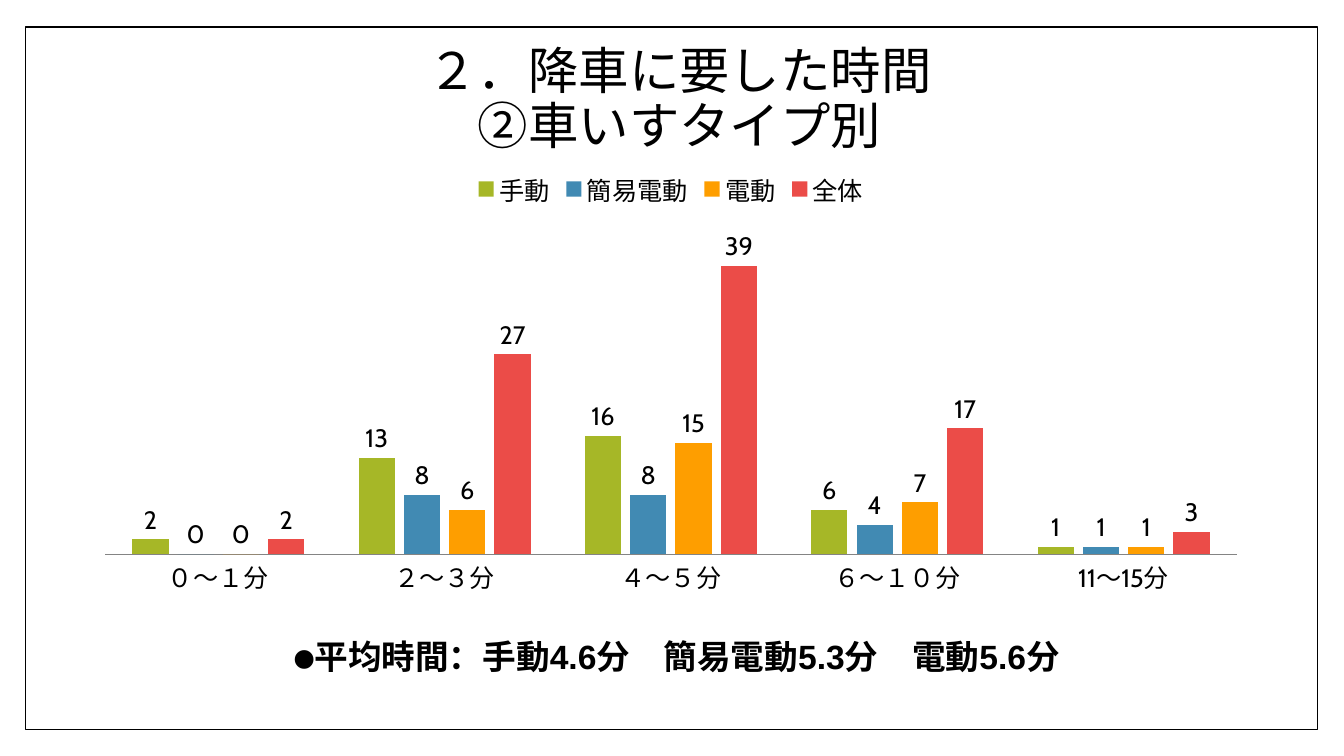
from pptx import Presentation
from pptx.chart.data import CategoryChartData as Data
from pptx.dml.color import RGBColor as Color
from pptx.enum.chart import XL_CHART_TYPE as Kind, XL_LABEL_POSITION as Spot
from pptx.enum.chart import XL_LEGEND_POSITION as Side, XL_TICK_MARK as Tick
from pptx.enum.chart import XL_TICK_LABEL_POSITION as Place
from pptx.enum.shapes import MSO_SHAPE as Shape
from pptx.enum.text import MSO_ANCHOR as Anchor, PP_ALIGN as Align
from pptx.util import Inches, Pt

HUES = {
    "black": "000000", "white": "FFFFFF", "axis": "848484",
    "green": "A6B727", "blue": "418AB3", "gold": "FE9E00", "red": "EB4C48",
}
TIMES = ["０～１分", "２～３分", "４～５分", "６～１０分", "11～15分"]
TYPES = [
    ("手動", "green", (2, 13, 16, 6, 1)),
    ("簡易電動", "blue", (0, 8, 8, 4, 1)),
    ("電動", "gold", (0, 6, 15, 7, 1)),
    ("全体", "red", (2, 27, 39, 17, 3)),
]


def hue(name):
    return Color.from_string(HUES[name])


def style(font, size, face="Cabin", bold=False, color="black"):
    font.size, font.name, font.bold = Pt(size), face, bold
    font.color.rgb = hue(color)


def write(frame, text, align=Align.LEFT, lead=None, **look):
    line = frame.paragraphs[0]
    line.text = text
    line.alignment = align
    line.line_spacing = lead
    for run in line.runs:
        style(run.font, **look)


class Page:
    def __init__(self, deck):
        self.slide = deck.slides.add_slide(deck.slide_layouts[6])
        self.shapes = self.slide.shapes

    def frame(self, *box):
        rect = self.shapes.add_shape(Shape.RECTANGLE, *map(Inches, box))
        rect.shadow.inherit = False
        rect.fill.solid()
        rect.fill.fore_color.rgb = hue("white")
        rect.line.color.rgb = hue("black")
        rect.line.width = Pt(1)

    def text(self, words, *box, anchor=Anchor.TOP, **look):
        frame = self.shapes.add_textbox(*map(Inches, box)).text_frame
        frame.word_wrap = True
        frame.vertical_anchor = anchor
        write(frame, words, **look)

    def bars(self, cats, rows, *box, top=45):
        data = Data()
        data.categories = cats
        for name, _, vals in rows:
            data.add_series(name, vals)
        chart = self.shapes.add_chart(
            Kind.COLUMN_CLUSTERED, *map(Inches, box), data).chart
        style(chart.font, 18)
        chart.has_title = False
        chart.has_legend = True
        chart.legend.position = Side.TOP
        chart.legend.include_in_layout = False
        plot = chart.plots[0]
        plot.gap_width, plot.overlap = 150, -25
        plot.vary_by_categories = False
        for series, (_, color, _) in zip(plot.series, rows):
            series.format.fill.solid()
            series.format.fill.fore_color.rgb = hue(color)
            series.invert_if_negative = False
            labels = series.data_labels
            labels.show_value = True
            labels.position = Spot.OUTSIDE_END
            style(labels.font, 18)
        axis = chart.category_axis
        axis.major_tick_mark = axis.minor_tick_mark = Tick.NONE
        axis.tick_label_position = Place.NEXT_TO_AXIS
        axis.format.line.color.rgb = hue("axis")
        axis.format.line.width = Pt(0.75)
        scale = chart.value_axis
        scale.minimum_scale, scale.maximum_scale = 0, top
        scale.has_major_gridlines = False
        scale.visible = False


def main():
    deck = Presentation()
    deck.slide_width, deck.slide_height = Inches(13.33), Inches(7.5)
    page = Page(deck)
    page.frame(0.25, 0.27, 12.82, 6.97)
    page.text("２．降車に要した時間\v②車いすタイプ別", 1.34, 0.46, 10.8, 1.08,
              anchor=Anchor.MIDDLE, align=Align.CENTER, lead=0.9, size=36)
    page.text("⚫平均時間：手動4.6分　簡易電動5.3分　電動5.6分　",
              2.82, 6.26, 8.44, 0.5, size=24, face="Arial", bold=True)
    page.bars(TIMES, TYPES, 0.81, 1.57, 11.69, 4.42)
    deck.save("out.pptx")


if __name__ == "__main__":
    main()
